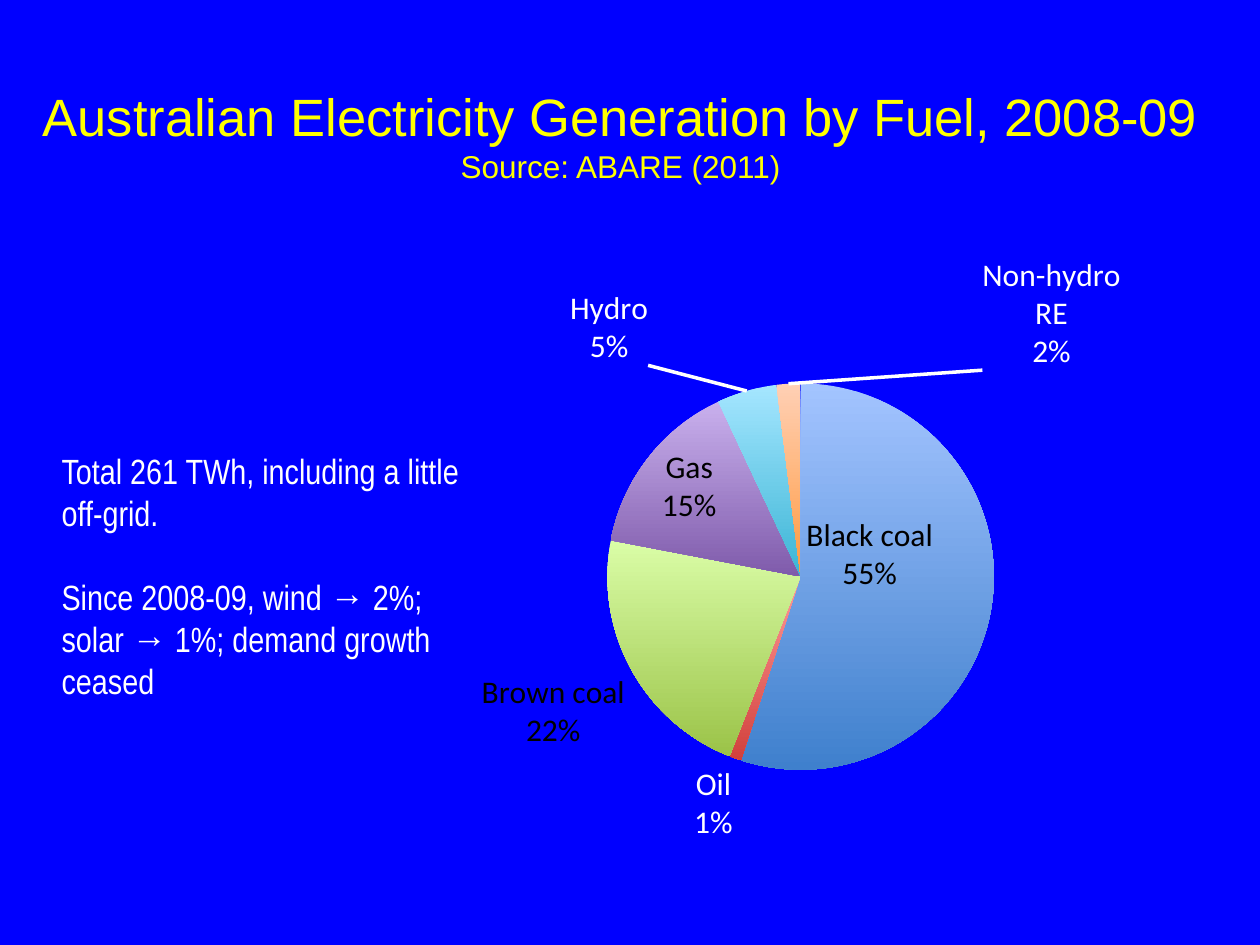
from lxml.etree import SubElement
from pptx import Presentation
from pptx.chart.data import CategoryChartData
from pptx.dml.color import RGBColor
from pptx.enum.chart import XL_CHART_TYPE, XL_LABEL_POSITION
from pptx.enum.text import MSO_ANCHOR, PP_ALIGN
from pptx.oxml import parse_xml
from pptx.oxml.ns import nsdecls, qn
from pptx.util import Inches, Pt

BLUE = RGBColor(0x00, 0x00, 0xFF)
YELLOW = RGBColor(0xFF, 0xFF, 0x00)
WHITE = RGBColor(0xFF, 0xFF, 0xFF)
BLACK = RGBColor(0x00, 0x00, 0x00)

CENTER = XL_LABEL_POSITION.CENTER
OUTSIDE = XL_LABEL_POSITION.OUTSIDE_END

# fuel, percent, top colour, bottom colour, label colour, label position, label offset
FUELS = [
    ("Black coal", 55, "A3C4FF", "3F80CD", BLACK, CENTER, (-0.03, -0.06)),
    ("Oil", 1, "FF9A99", "D1403C", WHITE, OUTSIDE, None),
    ("Brown coal", 22, "DAFDA7", "9BC348", BLACK, OUTSIDE, None),
    ("Gas", 15, "C9B0ED", "7F5BAB", BLACK, CENTER, (-0.04, -0.05)),
    ("Hydro", 5, "A5E6FF", "3BB5D5", WHITE, OUTSIDE, (-0.11, -0.03)),
    ("Non-hydro RE", 2, "FFD0B5", "FF9A3F", WHITE, OUTSIDE, (0.3, -0.01)),
]


def write(para, text, *, size, font, color):
    span = para.add_run()
    span.text = text
    span.font.size = Pt(size)
    span.font.name = font
    span.font.color.rgb = color


def manual_layout(x, y, width=None, height=None):
    """Return a c:layout: an offset for a label, a frame for a plot area."""
    layout = parse_xml(f"<c:layout {nsdecls('c')}><c:manualLayout/></c:layout>")
    settings = [("x", x), ("y", y)]
    if width:
        settings = [("layoutTarget", "inner"), ("xMode", "edge"), ("yMode", "edge"),
                    *settings, ("w", width), ("h", height)]
    for name, value in settings:
        SubElement(layout[0], qn(f"c:{name}")).set("val", str(value))
    return layout


class FuelSlide:
    """Holds the slide and its shared style."""

    title_font = "Arial"
    note_font = "Arial Narrow"
    chart_font = "Calibri"

    def __init__(self, deck):
        self.page = deck.slides.add_slide(deck.slide_layouts[6])
        fill = self.page.background.fill
        fill.solid()
        fill.fore_color.rgb = BLUE

    def text_box(self, left, top, width, height):
        box = self.page.shapes.add_textbox(
            Inches(left), Inches(top), Inches(width), Inches(height))
        box.text_frame.word_wrap = True
        return box.text_frame

    def title(self, heading, source):
        frame = self.text_box(0, 0.54, 9.85, 1.06)
        frame.vertical_anchor = MSO_ANCHOR.MIDDLE
        para = frame.paragraphs[0]
        para.alignment = PP_ALIGN.CENTER
        write(para, heading, size=30, font=self.title_font, color=YELLOW)
        para.add_line_break()
        write(para, source, size=18, font=self.title_font, color=YELLOW)

    def notes(self, first, second):
        frame = self.text_box(0.39, 3.52, 3.41, 2.15)
        write(frame.paragraphs[0], first, size=20, font=self.note_font, color=WHITE)
        para = frame.add_paragraph()
        para.space_before = Pt(24)
        write(para, second, size=20, font=self.note_font, color=WHITE)

    def pie(self):
        data = CategoryChartData()
        data.categories = [fuel[0] for fuel in FUELS]
        data.add_series("Series 1", [fuel[1] for fuel in FUELS])
        chart = self.page.shapes.add_chart(
            XL_CHART_TYPE.PIE, Inches(2.87), Inches(1.95), Inches(6.97), Inches(4.91),
            data).chart
        chart.has_legend = False
        chart.has_title = False
        chart.font.size = Pt(18)
        chart.font.name = self.chart_font
        chart.font.color.rgb = BLACK
        plot = chart.plots[0]
        plot.vary_by_categories = True
        area = chart._chartSpace.find(".//" + qn("c:plotArea"))
        for old in area.findall(qn("c:layout")):
            area.remove(old)
        area.insert(0, manual_layout(0.28, 0.22, 0.44, 0.63))

        series = plot.series[0]
        labels = series.data_labels
        labels.show_value = False
        labels.show_category_name = True
        labels.show_percentage = True
        for index, fuel in enumerate(FUELS):
            self.slice(series.points[index], *fuel[2:])
        self.finish_labels(labels._element)

    def slice(self, point, top_color, bottom_color, label_color, position, _offset):
        fill = point.format.fill
        fill.gradient()
        fill.gradient_angle = 270
        for stop, color in zip(fill.gradient_stops, (top_color, bottom_color)):
            stop.color.rgb = RGBColor.from_string(color)
        label = point.data_label
        label.font.size = Pt(18)
        label.font.name = self.chart_font
        label.font.color.rgb = label_color
        label.position = position

    def finish_labels(self, labels):
        """Show name over percent, shift the labels and whiten the leader lines."""
        for label, fuel in zip(labels.findall(qn("c:dLbl")), FUELS):
            for name, value in (("showVal", "0"), ("showCatName", "1"),
                                ("showPercent", "1")):
                label.find(qn(f"c:{name}")).set("val", value)
            SubElement(label, qn("c:separator")).text = "\n"
            if fuel[-1]:
                label.insert(1, manual_layout(*fuel[-1]))
        for old in labels.findall(qn("c:showLeaderLines")):
            labels.remove(old)
        SubElement(labels, qn("c:separator")).text = "\n"
        SubElement(labels, qn("c:showLeaderLines")).set("val", "1")
        labels.append(parse_xml(
            f"<c:leaderLines {nsdecls('c', 'a')}><c:spPr><a:ln w='25400'><a:solidFill>"
            f"<a:srgbClr val='{WHITE}'/></a:solidFill></a:ln></c:spPr></c:leaderLines>"))


def main():
    deck = Presentation()
    deck.slide_width = Inches(10)
    deck.slide_height = Inches(7.5)
    slide = FuelSlide(deck)
    slide.title("Australian Electricity Generation by Fuel, 2008-09",
                "Source: ABARE (2011)")
    slide.notes("Total 261 TWh, including a little off-grid.",
                "Since 2008-09, wind → 2%; solar → 1%; demand growth ceased")
    slide.pie()
    deck.save("out.pptx")


if __name__ == "__main__":
    main()
